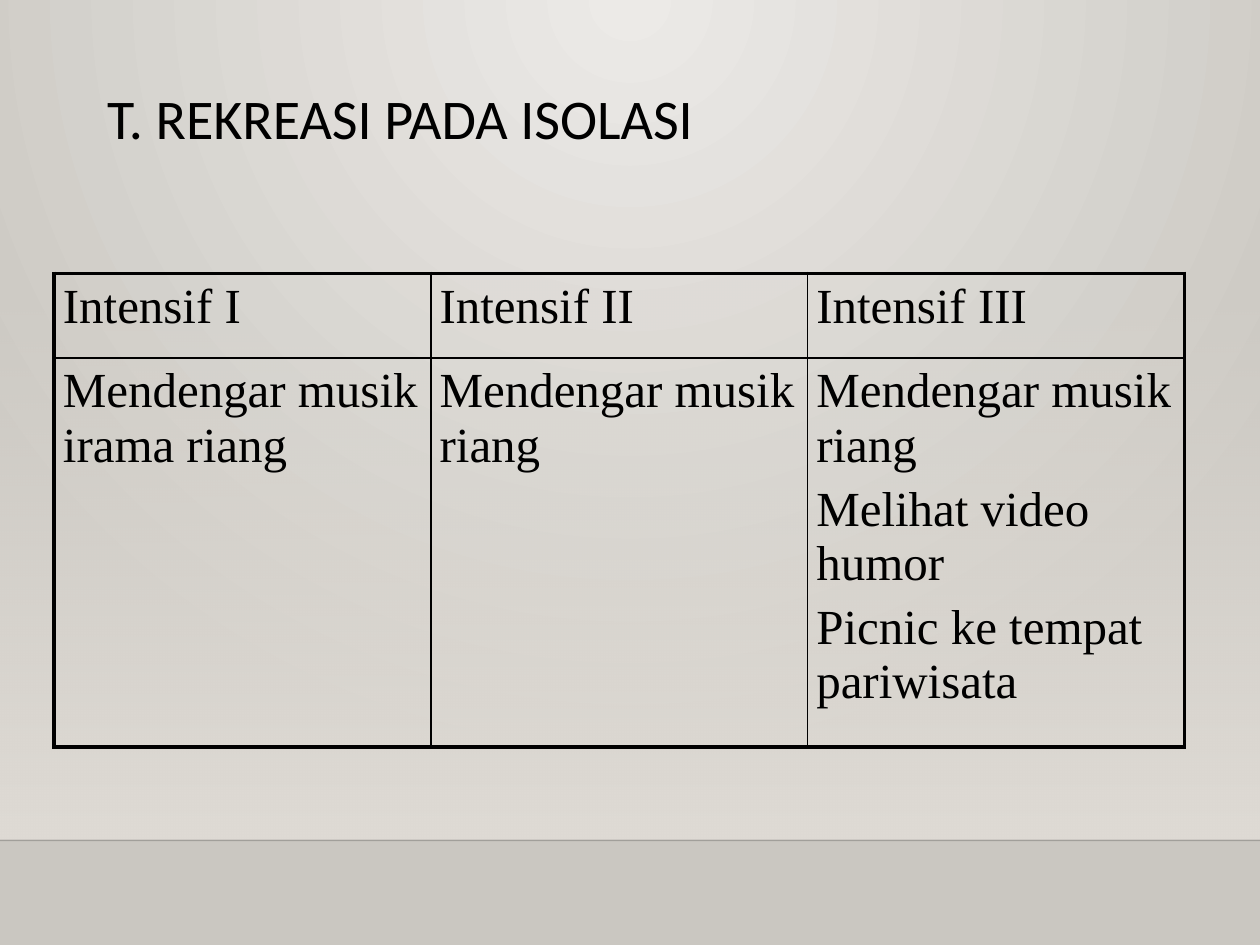
"""Build the slide on recreation for isolated patients."""
from pptx import Presentation
from pptx import util as u
from pptx.dml.color import RGBColor
from pptx.enum import shapes, text
from pptx.oxml import parse_xml
from pptx.oxml.ns import nsdecls, qn

BLACK = RGBColor(0x00, 0x00, 0x00)
GLOW = RGBColor(0xEC, 0xEA, 0xE7)
STONE = RGBColor(0xCA, 0xC7, 0xC1)
SAND = RGBColor(0xDF, 0xDB, 0xD5)

TITLE_FONT = {"name": "Calibri", "size": u.Pt(32), "bold": False}
CELL_FONT = {"name": "Times New Roman", "size": u.Pt(28), "bold": False}
CELL_MARGINS = {"margin_left": u.Inches(0.07), "margin_right": u.Inches(0.07),
                "margin_top": u.Inches(0.05), "margin_bottom": u.Inches(0.05)}
TITLE_FRAME = {"margin_left": u.Inches(0.1), "margin_right": u.Inches(0.1),
               "margin_top": u.Inches(0.05), "margin_bottom": u.Inches(0.05),
               "vertical_anchor": text.MSO_ANCHOR.TOP, "word_wrap": True,
               "auto_size": text.MSO_AUTO_SIZE.NONE}
PLAIN_TABLE = {"first_row": False, "horz_banding": False}

ACTIVITIES = [
    [["Intensif I"], ["Intensif II"], ["Intensif III"]],
    [["Mendengar musik irama riang"],
     ["Mendengar musik riang"],
     ["Mendengar musik riang", "Melihat video humor",
      "Picnic ke tempat pariwisata"]],
]
COLUMN_WIDTH = 2.99
ROW_HEIGHTS = [0.67, 3.09]
OUTER, INNER = 2.25, 1


def apply_format(target, values):
    """Set each attribute named in the format dict."""
    for name, value in values.items():
        setattr(target, name, value)


def style_font(font, values):
    """Apply the font values in black."""
    apply_format(font, values)
    font.color.rgb = BLACK


def set_alpha(color_element, percent):
    """Set the opacity of a colour element."""
    color_element.append(parse_xml(
        f'<a:alpha {nsdecls("a")} val="{percent * 1000}"/>'))


def set_gradient(fill, colors):
    """Give a fill a two-stop gradient."""
    fill.gradient()
    for stop, color in zip(fill.gradient_stops, colors):
        stop.color.rgb = color


def add_backdrop(slide):
    """Light the background from the top centre."""
    set_gradient(slide.background.fill, (GLOW, STONE))
    linear = slide.element.find(".//" + qn("a:lin"))
    linear.getparent().replace(linear, parse_xml(
        f'<a:path {nsdecls("a")} path="circle"><a:fillToRect l="43000" '
        'r="43000" b="100000"/></a:path>'))


def add_wall(slide):
    """Add the band that fades in towards the floor."""
    wall = slide.shapes.add_shape(
        shapes.MSO_SHAPE.RECTANGLE, 0, u.Inches(2.2), u.Inches(10), u.Inches(4.46))
    wall.shadow.inherit = False
    wall.line.fill.background()
    set_gradient(wall.fill, (SAND, SAND))
    wall.fill.gradient_angle = 270
    set_alpha(wall.element.find(".//" + qn("a:srgbClr")), 0)


def add_floor_line(slide):
    """Add the faint line where the floor begins."""
    edge = slide.shapes.add_connector(
        shapes.MSO_CONNECTOR.STRAIGHT, 0, u.Inches(6.67), u.Inches(10), u.Inches(6.67))
    edge.line.width = u.Pt(1)
    edge.line.color.rgb = BLACK
    set_alpha(edge.element.find(".//" + qn("a:srgbClr")), 20)
    edge.element.spPr.append(parse_xml(f'<a:effectLst {nsdecls("a")}/>'))


def add_title(slide, wording):
    """Place and format the title."""
    title = slide.shapes.title
    apply_format(title, {"left": u.Inches(0.75), "top": u.Inches(0.67),
                         "width": u.Inches(8.5), "height": u.Inches(1.25)})
    apply_format(title.text_frame, TITLE_FRAME)
    title.text_frame.text = wording
    heading = title.text_frame.paragraphs[0]
    apply_format(heading, {"alignment": text.PP_ALIGN.LEFT, "line_spacing": 0.9})
    style_font(heading.runs[0].font, TITLE_FONT)


def set_borders(cell, widths):
    """Draw the left, right, top and bottom borders of a cell."""
    properties = cell._tc.get_or_add_tcPr()
    for position, (side, width) in enumerate(zip("LRTB", widths)):
        properties.insert(position, parse_xml(
            f'<a:ln{side} {nsdecls("a")} w="{u.Pt(width)}"><a:solidFill>'
            f'<a:srgbClr val="{BLACK}"/></a:solidFill></a:ln{side}>'))


def fill_cell(cell, entries):
    """Write one paragraph for each entry."""
    apply_format(cell, CELL_MARGINS)
    cell.fill.background()
    cell.text = "\n".join(entries)
    for index, entry in enumerate(cell.text_frame.paragraphs):
        if index:
            entry.space_before = u.Pt(5.6)
        style_font(entry.runs[0].font, CELL_FONT)


def add_activity_table(slide):
    """Add the table of activities for each intensive phase."""
    rows, columns = len(ACTIVITIES), len(ACTIVITIES[0])
    table = slide.shapes.add_table(
        rows, columns, u.Inches(0.43), u.Inches(2.17),
        u.Inches(COLUMN_WIDTH * columns), u.Inches(sum(ROW_HEIGHTS))).table
    apply_format(table, PLAIN_TABLE)
    for column in table.columns:
        column.width = u.Inches(COLUMN_WIDTH)
    for r, phases in enumerate(ACTIVITIES):
        table.rows[r].height = u.Inches(ROW_HEIGHTS[r])
        for c, entries in enumerate(phases):
            cell = table.cell(r, c)
            fill_cell(cell, entries)
            on_edge = (c == 0, c == columns - 1, r == 0, r == rows - 1)
            set_borders(cell, [OUTER if edge else INNER for edge in on_edge])


def main():
    """Build and save the presentation."""
    deck = Presentation()
    deck.slide_width, deck.slide_height = u.Inches(10), u.Inches(7.5)
    slide = deck.slides.add_slide(deck.slide_layouts[5])
    add_backdrop(slide)
    add_wall(slide)
    add_floor_line(slide)
    add_title(slide, "T. REKREASI PADA ISOLASI")
    add_activity_table(slide)
    deck.save("out.pptx")


if __name__ == "__main__":
    main()
